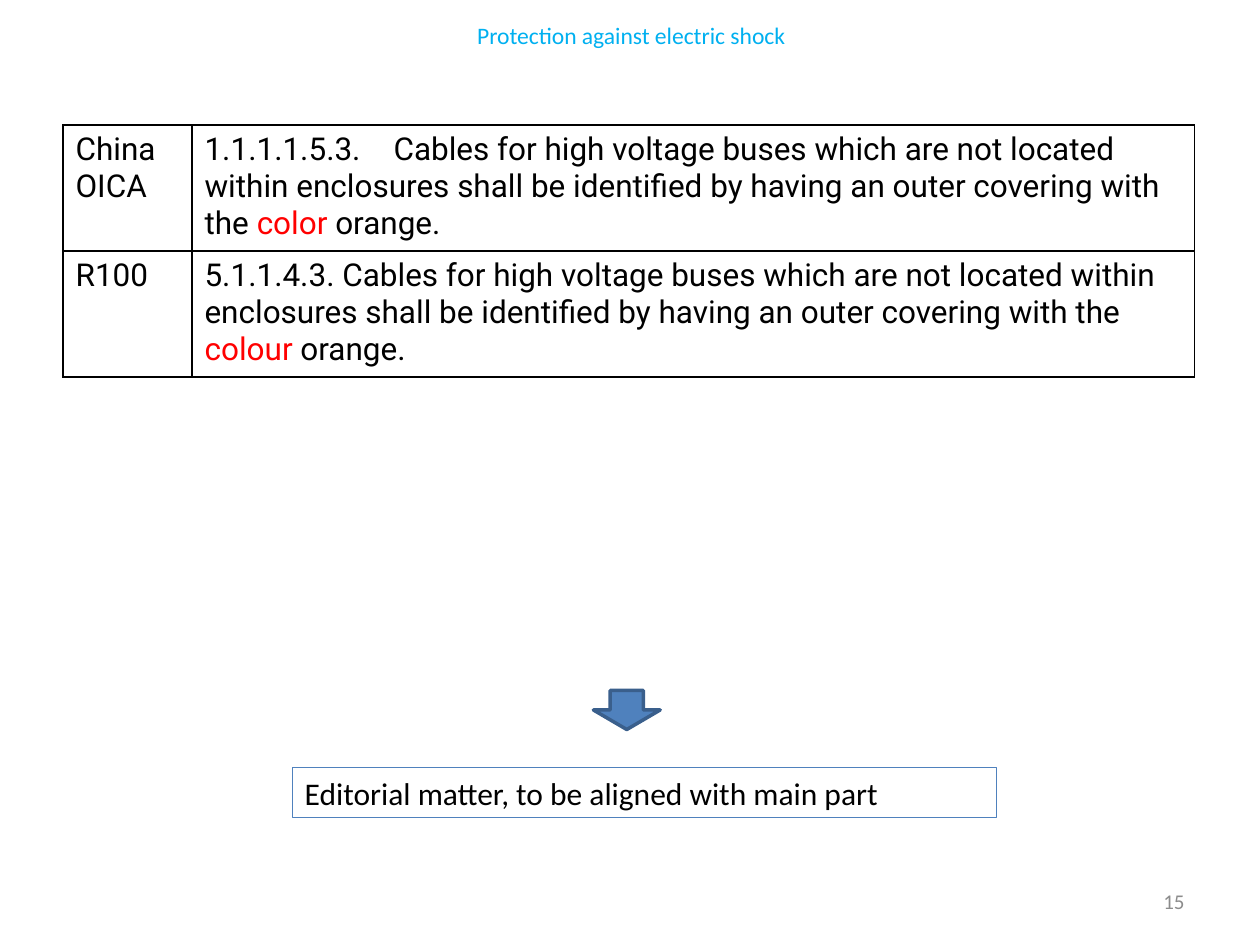
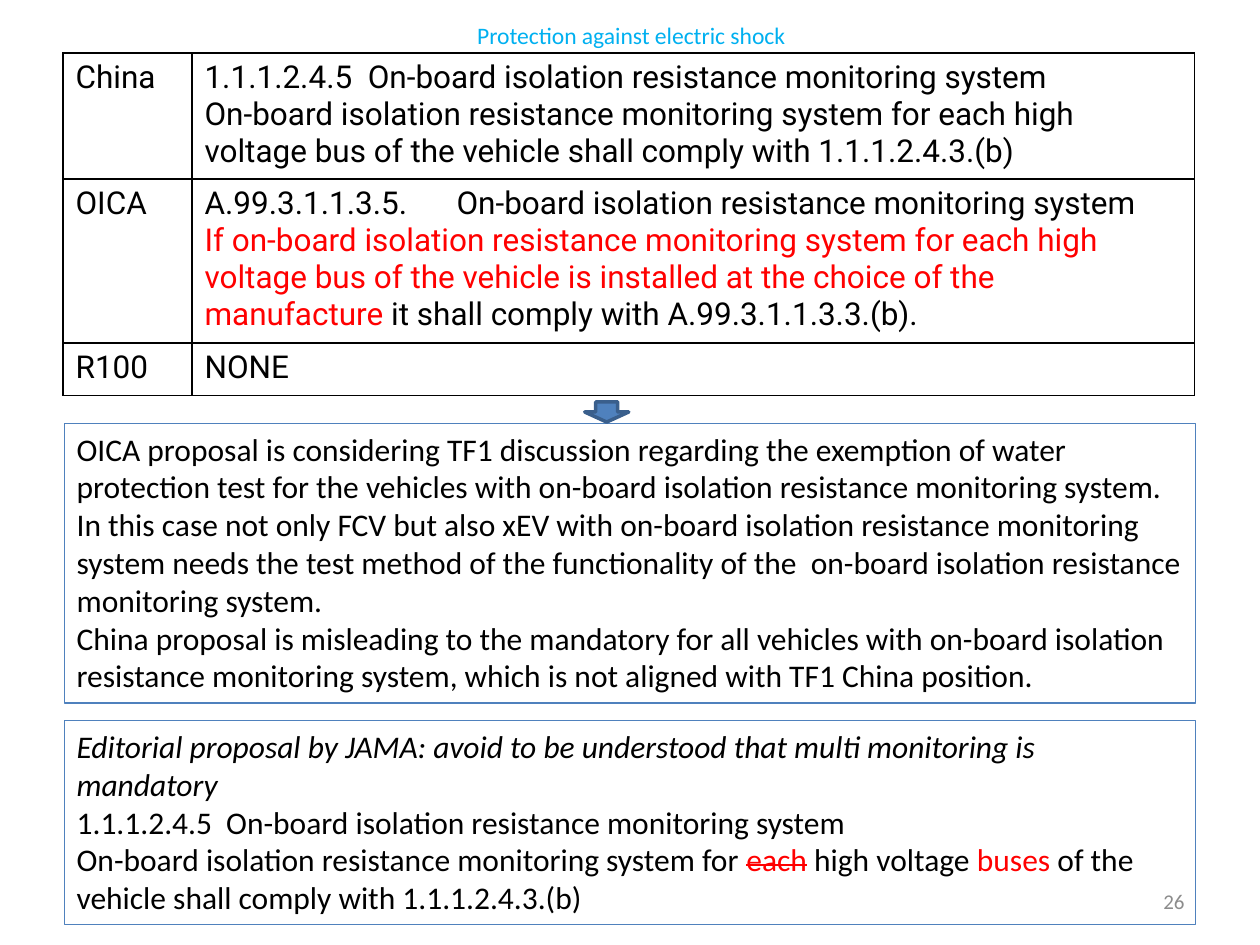
from lxml.etree import SubElement
from pptx import Presentation
from pptx.dml.color import RGBColor as Rgb
from pptx.enum.shapes import MSO_SHAPE as Shape
from pptx.enum.text import MSO_ANCHOR as Anchor, MSO_AUTO_SIZE as Fit, PP_ALIGN as Align
from pptx.oxml.ns import qn
from pptx.util import Inches, Pt

HUES = {
    "ink": "000000",
    "mark": "FF0000",
    "title": "00B0F0",
    "page": "8C8C8C",
    "blue": "4F81BD",
    "edge": "3A5F8C",
}
WIDE, HIGH = Inches(10), Inches(7.5)
COLS, ROWS = 100, 75
SPLIT = 0.114
TITLE = (5.1, 1.3, 90, 3)
PAGE = (71.7, 69.5, 23.3, 4)


def hue(name):
    return Rgb.from_string(HUES[name])


def place(box):
    x, y, w, h = box
    return [int(n) for n in (x * WIDE / COLS, y * HIGH / ROWS,
                             w * WIDE / COLS, h * HIGH / ROWS)]


def say(frame, text, size=18, face="Calibri", tone="ink",
        align=Align.LEFT, anchor=Anchor.TOP):
    frame.word_wrap = True
    frame.vertical_anchor = anchor
    for i, line in enumerate(text):
        para = frame.add_paragraph() if i else frame.paragraphs[0]
        para.alignment = align
        for part in [line] if isinstance(line, str) else line:
            words, *marks = [part] if isinstance(part, str) else part
            run = para.add_run()
            run.text = words
            run.font.size = Pt(size)
            run.font.name = face
            run.font.color.rgb = hue("mark" if "red" in marks else tone)
            run.font.italic = "slant" in marks
            if "cut" in marks:
                run._r.get_or_add_rPr().set("strike", "sngStrike")


def label(slide, box, text, **form):
    frame = slide.shapes.add_textbox(*place(box)).text_frame
    say(frame, [text], anchor=Anchor.MIDDLE, **form)


def base(deck, page):
    slide = deck.slides.add_slide(deck.slide_layouts[6])
    label(slide, TITLE, "Protection against electric shock",
          size=13.5, tone="title", align=Align.CENTER)
    label(slide, PAGE, page, size=12, tone="page", align=Align.RIGHT)
    return slide


def rule(cell):
    props = cell._tc.get_or_add_tcPr()
    for side in ("lnL", "lnR", "lnT", "lnB"):
        line = SubElement(props, qn(f"a:{side}"), w=str(Pt(1)))
        fill = SubElement(line, qn("a:solidFill"))
        SubElement(fill, qn("a:srgbClr"), val=HUES["ink"])
    cell.fill.background()


def grid(slide, box, tall, rows):
    left, top, wide, high = place(box)
    table = slide.shapes.add_table(len(rows), 2, left, top, wide, high).table
    table.first_row = table.horz_banding = False
    table.columns[0].width = int(wide * SPLIT)
    table.columns[1].width = wide - table.columns[0].width
    for row, share, texts in zip(table.rows, tall, rows):
        row.height = int(high * share / sum(tall))
        for cell, text in zip(row.cells, texts):
            rule(cell)
            say(cell.text_frame, text, face="Roboto")


def panel(slide, box, text):
    shape = slide.shapes.add_shape(Shape.RECTANGLE, *place(box))
    shape.shadow.inherit = False
    shape.fill.background()
    shape.line.color.rgb = hue("blue")
    shape.line.width = Pt(0.75)
    say(shape.text_frame, text)
    shape.text_frame.auto_size = Fit.SHAPE_TO_FIT_TEXT


def arrow(slide, box):
    shape = slide.shapes.add_shape(Shape.DOWN_ARROW, *place(box))
    shape.shadow.inherit = False
    shape.fill.solid()
    shape.fill.fore_color.rgb = hue("blue")
    shape.line.color.rgb = hue("edge")
    shape.line.width = Pt(2)


def cables(deck):
    slide = base(deck, "15")
    rest = ("Cables for high voltage buses which are not located within enclosures "
            "shall be identified by having an outer covering with the ")
    grid(slide, (5, 9.9, 89.8, 19.7), (1, 1), [
        (["China", "OICA"],
         [["1.1.1.1.5.3. \t" + rest, ("color", "red"), " orange."]]),
        (["R100"],
         [["5.1.1.4.3. " + rest, ("colour", "red"), " orange."]]),
    ])
    panel(slide, (23.2, 60.9, 55.9, 4),
          ["Editorial matter, to be aligned with main part"])
    arrow(slide, (47.1, 54.8, 5.3, 3.1))


def monitor(deck):
    slide = base(deck, "26")
    topic = "On-board isolation resistance monitoring system"
    head = "1.1.1.2.4.5  " + topic
    grid(slide, (5, 4.2, 89.8, 26.7), (9.8, 12.7, 4.2), [
        (["China"],
         [head, topic + " for each high voltage bus of the vehicle "
          "shall comply with 1.1.1.2.4.3.(b)"]),
        (["OICA"],
         ["A.99.3.1.1.3.5.\t" + topic,
          [("If on-board isolation resistance monitoring system for each high "
            "voltage bus of the vehicle is installed at the choice of the "
            "manufacture ", "red"),
           "it shall comply with A.99.3.1.1.3.3.(b)."]]),
        (["R100"], ["NONE"]),
    ])
    panel(slide, (5.1, 33.6, 89.8, 22.2), [
        "OICA proposal is considering TF1 discussion regarding the exemption of "
        "water protection test for the vehicles with on-board isolation "
        "resistance monitoring system.",
        "In this case not only FCV but also xEV with on-board isolation "
        "resistance monitoring system needs the test method of the functionality "
        "of the  on-board isolation resistance monitoring system.",
        "China proposal is misleading to the mandatory for all vehicles with "
        "on-board isolation resistance monitoring system, which is not aligned "
        "with TF1 China position.",
    ])
    panel(slide, (5.1, 57.2, 89.8, 16.2), [
        [("Editorial proposal by JAMA: avoid to be understood that multi "
          "monitoring is mandatory", "slant")],
        head,
        [topic + " for ", ("each", "red", "cut"), " high voltage ",
         ("buses", "red"), " of the vehicle shall comply with 1.1.1.2.4.3.(b)"],
    ])
    arrow(slide, (46.4, 31.9, 3.5, 1.6))


def main():
    deck = Presentation()
    deck.slide_width, deck.slide_height = WIDE, HIGH
    cables(deck)
    monitor(deck)
    deck.save("out.pptx")


if __name__ == "__main__":
    main()
